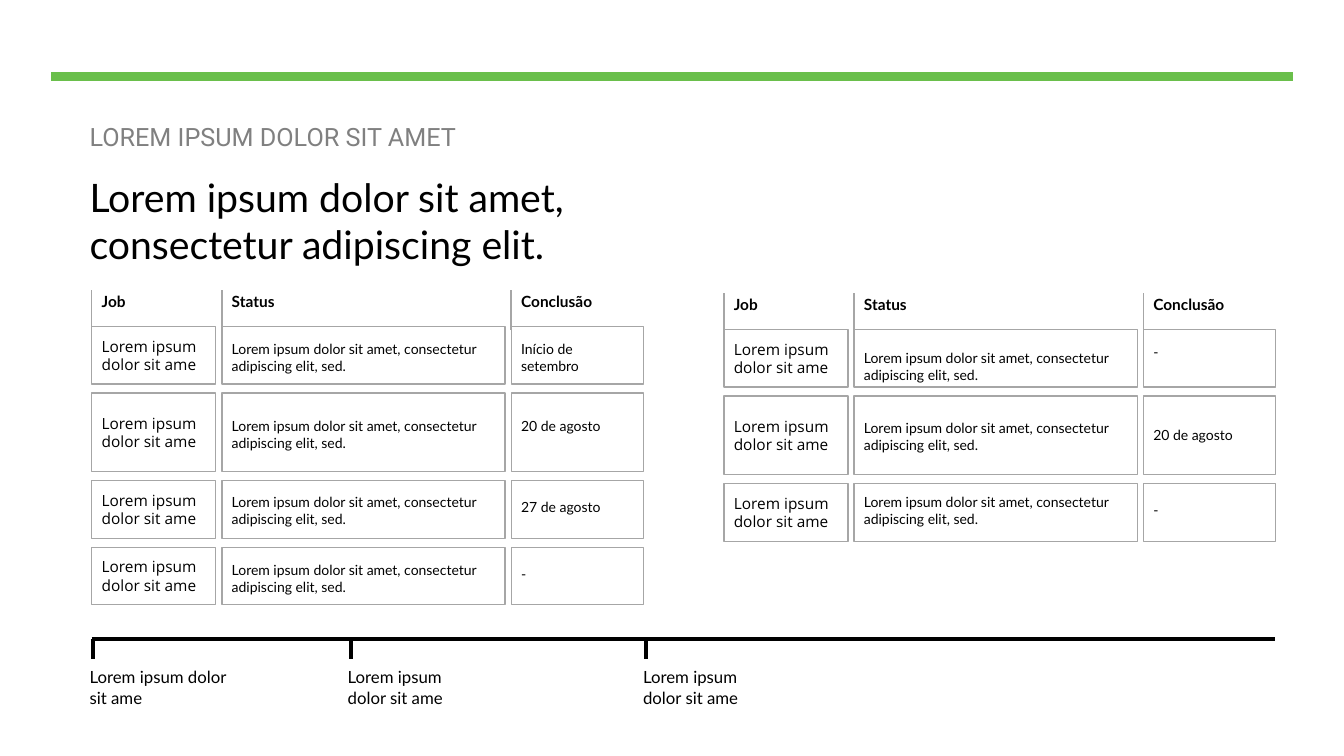
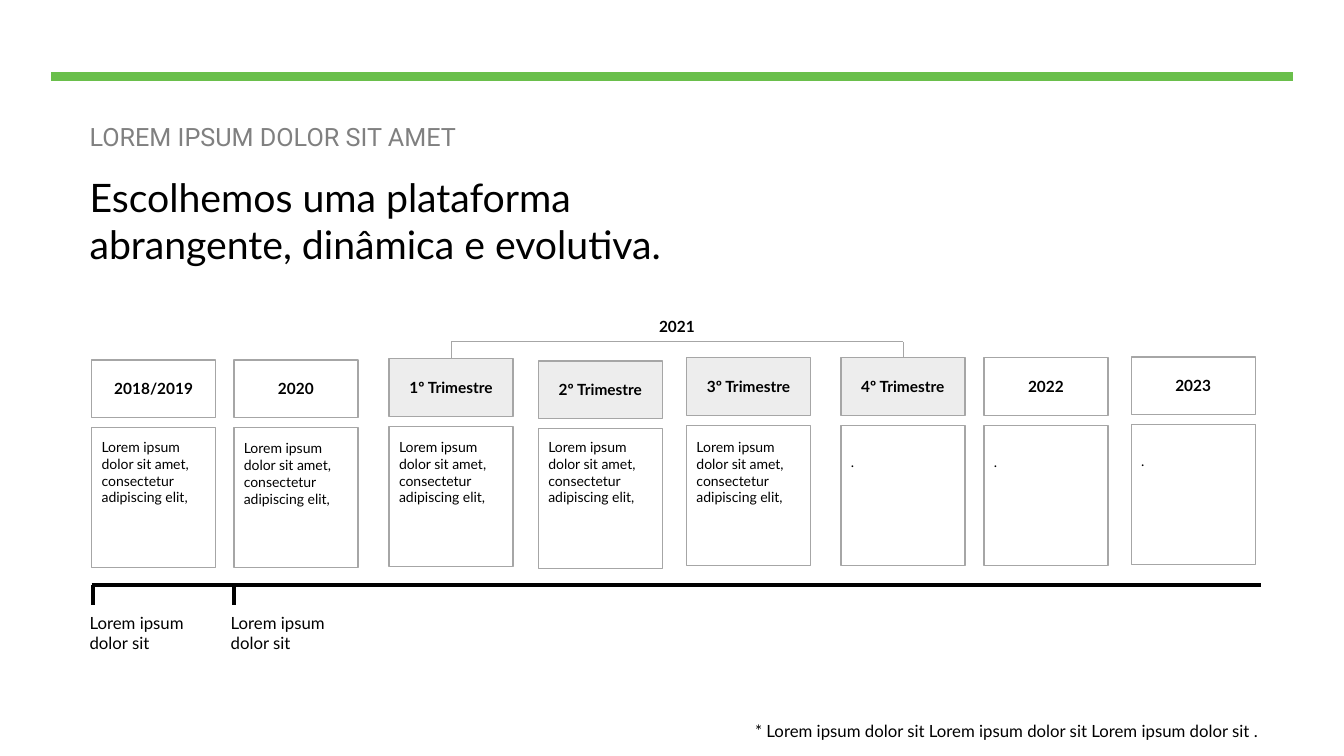
from pptx import Presentation
from pptx.dml.color import RGBColor
from pptx.enum.shapes import MSO_CONNECTOR, MSO_SHAPE
from pptx.enum.text import MSO_ANCHOR, PP_ALIGN
from pptx.oxml.ns import qn
from pptx.util import Inches, Pt
from lxml import etree

RECT = MSO_SHAPE.RECTANGLE
LINE = MSO_CONNECTOR.STRAIGHT
TOP, MIDDLE = MSO_ANCHOR.TOP, MSO_ANCHOR.MIDDLE
LEFT, CENTER, RIGHT = PP_ALIGN.LEFT, PP_ALIGN.CENTER, PP_ALIGN.RIGHT

GREEN, BLACK, GREY, RULE, SHADE = "6ABF4B", "000000", "808080", "A6A6A6", "EDEDED"
EDGE = 0.91
INDENT = 0.12   # text boxes start this far left of the edge
PAD = 0.05      # default top inset of a text frame

JOB = "Lorem ipsum dolor sit ame"
STATUS = "Lorem ipsum dolor sit amet, consectetur adipiscing elit, sed."
STEP = "Lorem ipsum dolor sit amet, consectetur adipiscing elit,"


def paint(part, color):
    part.solid()
    part.fore_color.rgb = RGBColor.from_string(color)


def write(shape, text, size, font="Lato", color=BLACK, bold=False,
          align=LEFT, anchor=TOP):
    frame = shape.text_frame
    frame.word_wrap = True
    frame.vertical_anchor = anchor
    frame.text = text
    para = frame.paragraphs[0]
    para.alignment = align
    face = para.runs[0].font
    face.name, face.size, face.bold = font, Pt(size), bold
    paint(face.fill, color)


def label(slide, x, y, w, h, text, size, **style):
    box = slide.shapes.add_textbox(Inches(x), Inches(y), Inches(w), Inches(h))
    write(box, text, size, **style)


def card(slide, x, y, w, h, fill=None):
    box = slide.shapes.add_shape(RECT, Inches(x), Inches(y), Inches(w), Inches(h))
    box.shadow.inherit = False
    if fill:
        paint(box.fill, fill)
    else:
        box.fill.background()
    paint(box.line.fill, RULE)
    box.line.width = Pt(1)
    return box


def note(slide, x, y, w, h, text, drop):
    """Card whose small text starts a given drop below its top side."""
    box = card(slide, x, y, w, h)
    write(box, text, 10)
    frame = box.text_frame
    frame.margin_top, frame.margin_bottom = Inches(drop + PAD), 0


def line(slide, x1, y1, x2, y2, color, width):
    link = slide.shapes.add_connector(
        LINE, Inches(x1), Inches(y1), Inches(x2), Inches(y2))
    paint(link.line.fill, color)
    link.line.width = Pt(width)
    etree.SubElement(link._element.spPr, qn("a:effectLst"))
    return link


def start(deck, title):
    """Add a slide with the green band, the overline and the title."""
    slide = deck.slides.add_slide(deck.slide_layouts[6])
    line(slide, 0.51, 0.76, 12.82, 0.76, GREEN, 6)
    x = EDGE - INDENT
    label(slide, x, 1.15, 5.87, 0.4, "LOREM IPSUM DOLOR SIT AMET", 18,
          font="Roboto", color=GREY)
    label(slide, x, 1.67, 6.5, 1.04, title, 28)
    return slide


def axis(slide, y, end, marks):
    """Time axis; each mark is its place, label width and label text."""
    line(slide, EDGE, y, end, y, BLACK, 3)
    for x, w, text in marks:
        line(slide, x, y, x, y + 0.2, BLACK, 3)
        label(slide, x - 0.13, y + 0.23, w, 0.5, text, 12)


def jobs(slide, x, y, rows):
    """Job grid; each row is height, status drop, date and date drop."""
    widths, gap, rowgap = (1.23, 2.81, 1.31), 0.06, 0.09
    lefts = [x + sum(widths[:i]) + i * gap for i in range(len(widths))]
    for left, head in zip(lefts, ("Job", "Status", "Conclusão")):
        line(slide, left, y + 0.03, left, y + 0.42, RULE, 1)
        label(slide, left, y, 1.01, 0.29, head, 11, bold=True)
    top = y + 0.39
    for h, low, date, drop in rows:
        cells = [(left, top, w, h) for left, w in zip(lefts, widths)]
        write(card(slide, *cells[0]), JOB, 11, font="Open Sans", anchor=MIDDLE)
        note(slide, *cells[1], STATUS, low)
        note(slide, *cells[2], date, drop)
        top += h + rowgap


def stage(slide, x, y, head, text, drop, fill=None):
    """Period heading over its card; gives back the heading."""
    w, h = 1.23, 0.57
    box = card(slide, x, y, w, h, fill)
    write(box, head, 11, bold=True, align=CENTER, anchor=MIDDLE)
    note(slide, x, y + h + 0.1, w, 1.39, text, drop)
    return box


def brace(slide, first, last, y, text):
    """Bracket that joins the tops of two headings under a label."""
    mids = [(box.left + box.width / 2) / Inches(1) for box in (first, last)]
    for box, x in zip((first, last), mids):
        line(slide, x, y + 0.16, x, y, RULE, 0.5).begin_connect(box, 0)
    line(slide, mids[0], y, mids[1], y, RULE, 0.5)
    label(slide, sum(mids) / 2 - 0.4, y - 0.29, 0.8, 0.29, text, 11,
          bold=True, align=CENTER)


def status(deck):
    slide = start(deck, "Lorem ipsum dolor sit amet, consectetur adipiscing elit.")
    jobs(slide, EDGE, 2.85, [
        (0.57, 0.09, "Início de setembro", 0.09),
        (0.78, 0.19, "20 de agosto", 0.19),
        (0.57, 0.08, "27 de agosto", 0.13),
        (0.57, 0.09, "-", 0.13),
    ])
    jobs(slide, 7.18, 2.88, [
        (0.57, 0.15, "-", 0.09),
        (0.78, 0.18, "20 de agosto", 0.25),
        (0.57, 0.05, "-", 0.13),
    ])
    axis(slide, 6.34, 12.65,
         [(0.92, 1.68, JOB), (3.48, 1.45, JOB), (6.41, 1.36, JOB)])


def roadmap(deck):
    slide = start(deck, "Escolhemos uma plataforma abrangente, dinâmica e evolutiva.")
    stages = [
        (EDGE, 3.57, "2018/2019", STEP, 0.06),
        (2.32, 3.57, "2020", STEP, 0.07),
        (3.86, 3.56, "1º Trimestre", STEP, 0.07, SHADE),
        (5.34, 3.58, "2º Trimestre", STEP, 0.05, SHADE),
        (6.81, 3.55, "3º Trimestre", STEP, 0.08, SHADE),
        (8.34, 3.55, "4º Trimestre", ".", 0.23, SHADE),
        (9.76, 3.55, "2022", ".", 0.23),
        (11.22, 3.54, "2023", ".", 0.23),
    ]
    heads = [stage(slide, *item) for item in stages]
    brace(slide, heads[2], heads[5], 3.39, "2021")
    text = "Lorem ipsum dolor sit"
    axis(slide, 5.8, 12.51, [(0.92, 1.23, text), (2.32, 1.23, text)])
    label(slide, 6.94, 7.1, 5.64, 0.3,
          "* Lorem ipsum dolor sit Lorem ipsum dolor sit Lorem ipsum dolor sit .",
          12, align=RIGHT)


def main():
    deck = Presentation()
    deck.slide_width, deck.slide_height = Inches(13.33), Inches(7.5)
    status(deck)
    roadmap(deck)
    deck.save("out.pptx")


if __name__ == "__main__":
    main()
